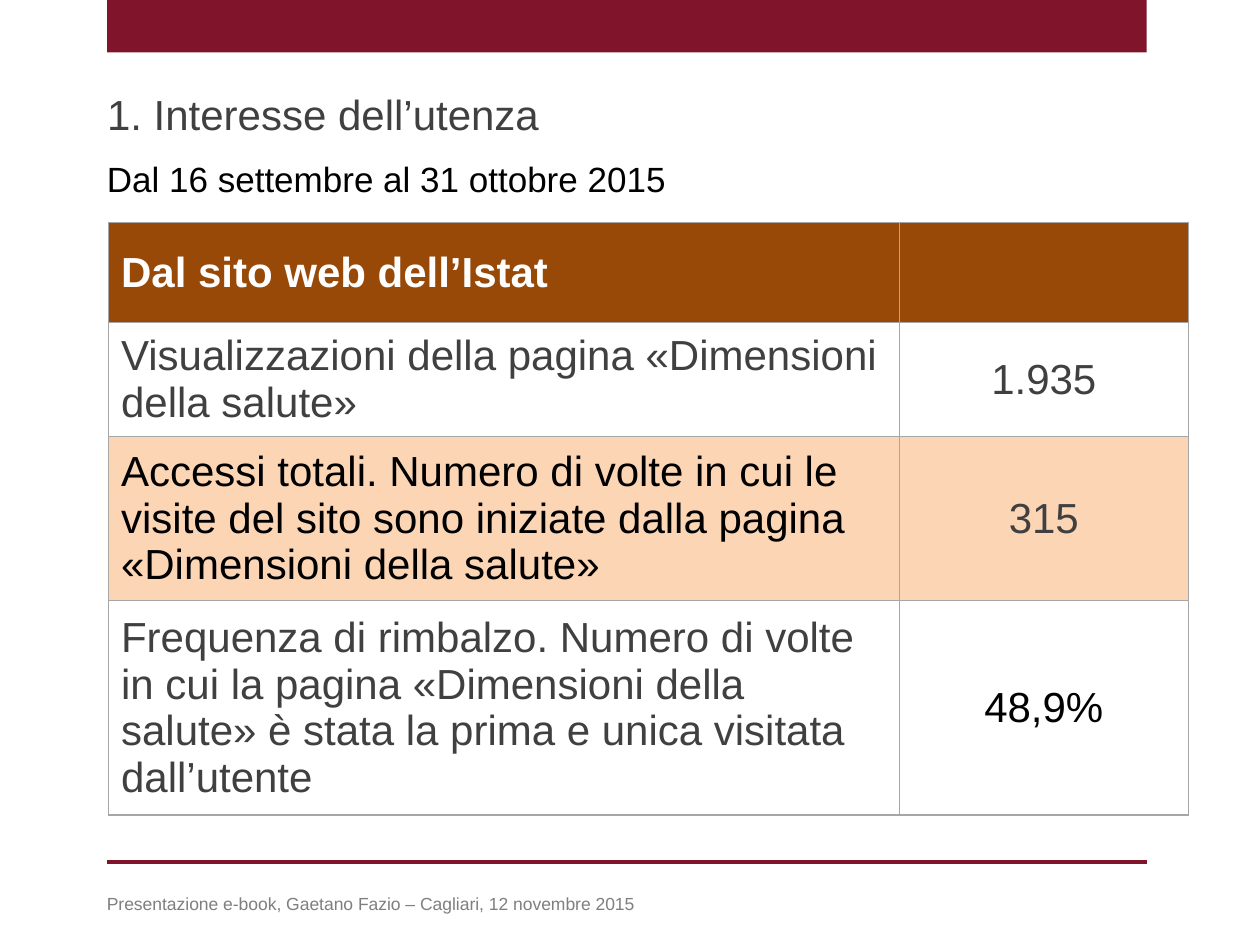
from lxml.etree import SubElement
from pptx import Presentation
from pptx.dml.color import RGBColor
from pptx.enum.shapes import MSO_CONNECTOR, MSO_SHAPE
from pptx.enum.text import MSO_ANCHOR, MSO_AUTO_SIZE, PP_ALIGN
from pptx.oxml.ns import qn
from pptx.util import Pt

CRIMSON, BROWN, PEACH, WHITE = "7F142A", "984807", "FCD5B5", "FFFFFF"
DARK, BLACK, GREY, BORDER = "404040", "000000", "7F7F7F", "A6A6A6"


def rgb(color):
    return RGBColor.from_string(color)


def write(tf, text, size, color, bold=False, align=PP_ALIGN.LEFT):
    """Fill a text frame with one formatted Arial paragraph."""
    tf.text = text
    tf.word_wrap = True
    p = tf.paragraphs[0]
    p.alignment = align
    for font in [p.font] + [r.font for r in p.runs]:
        font.name, font.size, font.bold = "Arial", Pt(size), bold
        font.color.rgb = rgb(color)


prs = Presentation()
prs.slide_width, prs.slide_height = Pt(720), Pt(540)
s = prs.slides.add_slide(prs.slide_layouts[5])

# Top band and footer rule
band = s.shapes.add_shape(MSO_SHAPE.RECTANGLE, Pt(61.2), 0, Pt(594), Pt(30))
band.shadow.inherit = False
band.fill.solid()
band.fill.fore_color.rgb = rgb(CRIMSON)
band.line.fill.background()

rule = s.shapes.add_connector(
    MSO_CONNECTOR.STRAIGHT, Pt(61.2), Pt(492.5), Pt(655.2), Pt(492.5))
rule.line.color.rgb = rgb(CRIMSON)
rule.line.width = Pt(2)
SubElement(rule._element.spPr, qn("a:effectLst"))

# Title, period and footer
title = s.shapes.title
title.left, title.top, title.width, title.height = Pt(54), Pt(47), Pt(593), Pt(36)
title.text_frame.auto_size = MSO_AUTO_SIZE.NONE
title.text_frame.vertical_anchor = MSO_ANCHOR.TOP
write(title.text_frame, "1. Interesse dell’utenza", 24, DARK)

for text, top, width, height, size, color in [
    ("Dal 16 settembre al 31 ottobre 2015", 86.5, 593, 31.5, 20, BLACK),
    ("Presentazione e-book, Gaetano Fazio – Cagliari, 12 novembre 2015",
     507, 369, 19.5, 10, GREY),
]:
    box = s.shapes.add_textbox(Pt(54), Pt(top), Pt(width), Pt(height))
    write(box.text_frame, text, size, color)

# Web traffic table: height, fill, (label, colour), (value, colour)
rows = [
    (57.5, BROWN, ("Dal sito web dell’Istat", WHITE), ("", WHITE)),
    (64.5, WHITE, ("Visualizzazioni della pagina «Dimensioni della salute»", DARK),
     ("1.935", DARK)),
    (94, PEACH, ("Accessi totali. Numero di volte in cui le visite del sito sono "
                 "iniziate dalla pagina «Dimensioni della salute»", BLACK),
     ("315", DARK)),
    (122, WHITE, ("Frequenza di rimbalzo. Numero di volte in cui la pagina "
                  "«Dimensioni della salute» è stata la prima e unica visitata "
                  "dall’utente", DARK), ("48,9%", BLACK)),
]
table = s.shapes.add_table(
    len(rows), 2, Pt(62), Pt(127), Pt(617), Pt(338)).table
table.horz_banding = False
for column, width in zip(table.columns, (452, 165)):
    column.width = Pt(width)

for i, (height, fill, *cells) in enumerate(rows):
    table.rows[i].height = Pt(height)
    for j, (text, color) in enumerate(cells):
        cell = table.cell(i, j)
        write(cell.text_frame, text, 24, color, bold=i == 0,
              align=PP_ALIGN.CENTER if j else PP_ALIGN.LEFT)
        cell.vertical_anchor = MSO_ANCHOR.MIDDLE
        tcPr = cell._tc.get_or_add_tcPr()
        for side in ("lnL", "lnR", "lnT", "lnB"):
            ln = SubElement(tcPr, qn(f"a:{side}"), w=str(Pt(0.75)))
            solid = SubElement(ln, qn("a:solidFill"))
            SubElement(solid, qn("a:srgbClr"), val=BORDER)
        cell.fill.solid()
        cell.fill.fore_color.rgb = rgb(fill)

prs.save("out.pptx")
